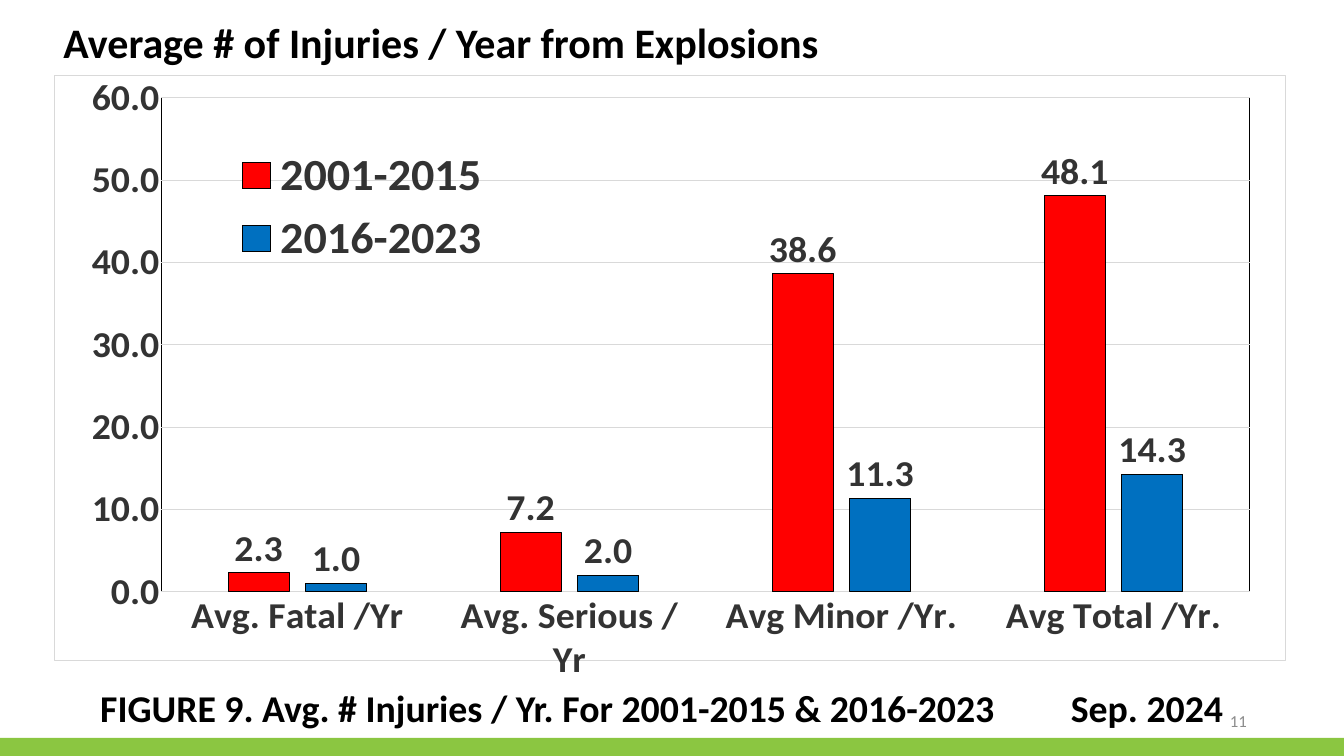
from lxml.etree import SubElement
from pptx import Presentation
from pptx.chart.data import CategoryChartData
from pptx.dml.color import RGBColor
from pptx.enum.chart import XL_CHART_TYPE, XL_LABEL_POSITION, XL_LEGEND_POSITION, XL_TICK_MARK
from pptx.enum.shapes import MSO_SHAPE
from pptx.enum.text import MSO_ANCHOR, MSO_AUTO_SIZE, PP_ALIGN
from pptx.oxml import parse_xml
from pptx.oxml.ns import nsdecls, qn
from pptx.util import Inches, Pt

W, H = 26.67, 15
TITLE = "Average # of Injuries / Year from Explosions"
CAPTION = "FIGURE 9. Avg. # Injuries / Yr. For 2001-2015 & 2016-2023\tSep. 2024"
NUMBER = "11"
CATEGORIES = ["Avg. Fatal /Yr", "Avg. Serious / Yr", "Avg Minor /Yr.", "Avg Total /Yr."]
SERIES = [
    ("2001-2015", (2.3, 7.2, 38.6, 48.1), "FF0000"),
    ("2016-2023", (1.0, 2.0, 11.3, 14.3), "0070C0"),
]
BLACK, INK, RULE = "000000", "333333", "D9D9D9"
PLOT = (0.087, 0.038, 0.884, 0.845)
LEGEND = (0.14, 0.11, 0.22, 0.23)


def rgb(color):
    return RGBColor.from_string(color)


def set_font(font, size, color, bold=True):
    font.name, font.size, font.bold = "Calibri", Pt(size), bold
    font.color.rgb = rgb(color)


def set_line(line, color):
    line.color.rgb = rgb(color)
    line.width = Pt(0.75)


def place(sp, left, top, width, height):
    sp.left, sp.top, sp.width, sp.height = map(Inches, (left, top, width, height))


def write(sp, text, size, color=BLACK, bold=True, align=PP_ALIGN.LEFT,
          anchor=MSO_ANCHOR.TOP, spacing=0.9, tab=None):
    tf = sp.text_frame
    tf.word_wrap, tf.auto_size, tf.vertical_anchor = True, MSO_AUTO_SIZE.NONE, anchor
    p = tf.paragraphs[0]
    p.text, p.alignment, p.line_spacing = text, align, spacing
    p.space_before = Pt(0)
    if tab:
        tabs = SubElement(p._p.get_or_add_pPr(), qn("a:tabLst"))
        SubElement(tabs, qn("a:tab"), pos=str(Inches(tab)), algn="l")
    set_font(p.font, size, color, bold)


def add_layout(parent, index, box, inner=False):
    for old in parent.findall(qn("c:layout")):
        parent.remove(old)
    target = '<c:layoutTarget val="inner"/>' if inner else ""
    modes = "".join(f'<c:{k}Mode val="edge"/>' for k in "xy")
    sizes = "".join(f'<c:{k} val="{v}"/>' for k, v in zip("xywh", box))
    parent.insert(index, parse_xml(
        f'<c:layout {nsdecls("c")}><c:manualLayout>{target}{modes}{sizes}'
        f'</c:manualLayout></c:layout>'))


def area_style(fill, line):
    return parse_xml(
        f'<c:spPr {nsdecls("c", "a")}>{fill}<a:ln w="{Pt(0.75)}"><a:solidFill>'
        f'<a:srgbClr val="{line}"/></a:solidFill></a:ln></c:spPr>')


def add_injury_chart(s):
    data = CategoryChartData(number_format="0.0")
    data.categories = CATEGORIES
    for name, values, _ in SERIES:
        data.add_series(name, values)
    box = map(Inches, (1.07, 1.49, 24.44, 12.05))
    chart = s.shapes.add_chart(XL_CHART_TYPE.COLUMN_CLUSTERED, *box, data).chart
    chart.has_title = False
    set_font(chart.font, 10, BLACK, False)

    plot = chart.plots[0]
    plot.gap_width, plot.overlap, plot.vary_by_categories = 219, -27, False
    for series, (_, _, color) in zip(plot.series, SERIES):
        series.format.fill.solid()
        series.format.fill.fore_color.rgb = rgb(color)
        set_line(series.format.line, BLACK)
        labels = series.data_labels
        labels.show_value, labels.position = True, XL_LABEL_POSITION.OUTSIDE_END
        labels.number_format, labels.number_format_is_linked = "0.0", False
        set_font(labels.font, 54, INK)

    cat, val = chart.category_axis, chart.value_axis
    for axis in (cat, val):
        axis.major_tick_mark = axis.minor_tick_mark = XL_TICK_MARK.NONE
        set_font(axis.tick_labels.font, 54, INK)
    set_line(cat.format.line, RULE)
    val.format.line.fill.background()
    val.minimum_scale, val.maximum_scale, val.major_unit = 0, 60, 10
    val.tick_labels.number_format = "0.0"
    val.tick_labels.number_format_is_linked = False
    set_line(val.major_gridlines.format.line, RULE)

    chart.has_legend = True
    legend = chart.legend
    legend.position, legend.include_in_layout = XL_LEGEND_POSITION.BOTTOM, False
    set_font(legend.font, 66, INK)
    add_layout(legend._element, 1, LEGEND)

    body = chart._chartSpace.find(qn("c:chart"))
    area = body.find(qn("c:plotArea"))
    add_layout(area, 0, PLOT, inner=True)
    area.append(area_style("<a:noFill/>", BLACK))
    white = '<a:solidFill><a:srgbClr val="FFFFFF"/></a:solidFill>'
    body.addnext(area_style(white, RULE))


def main():
    prs = Presentation()
    prs.slide_width, prs.slide_height = Inches(W), Inches(H)
    s = prs.slides.add_slide(prs.slide_layouts[5])

    band = s.shapes.add_shape(MSO_SHAPE.RECTANGLE, 0, 0, 0, 0)
    place(band, 0, H - 0.36, W, 0.36)
    band.shadow.inherit = False
    band.fill.solid()
    band.fill.fore_color.rgb = rgb("8BC641")
    band.line.fill.background()

    number = s.shapes.add_textbox(0, 0, 0, 0)
    place(number, 18.84, 13.9, 6, 0.8)
    write(number, NUMBER, 24, "8C8C8C", False, PP_ALIGN.RIGHT, MSO_ANCHOR.MIDDLE, 1.0)

    title = s.shapes.title
    place(title, 1.16, 0.4, 18.8, 1.39)
    write(title, TITLE, 60)

    caption = s.shapes.add_textbox(0, 0, 0, 0)
    place(caption, 1.89, 13.64, 24.58, 1)
    write(caption, CAPTION, 54, tab=19.26)

    add_injury_chart(s)
    prs.save("out.pptx")


if __name__ == "__main__":
    main()
